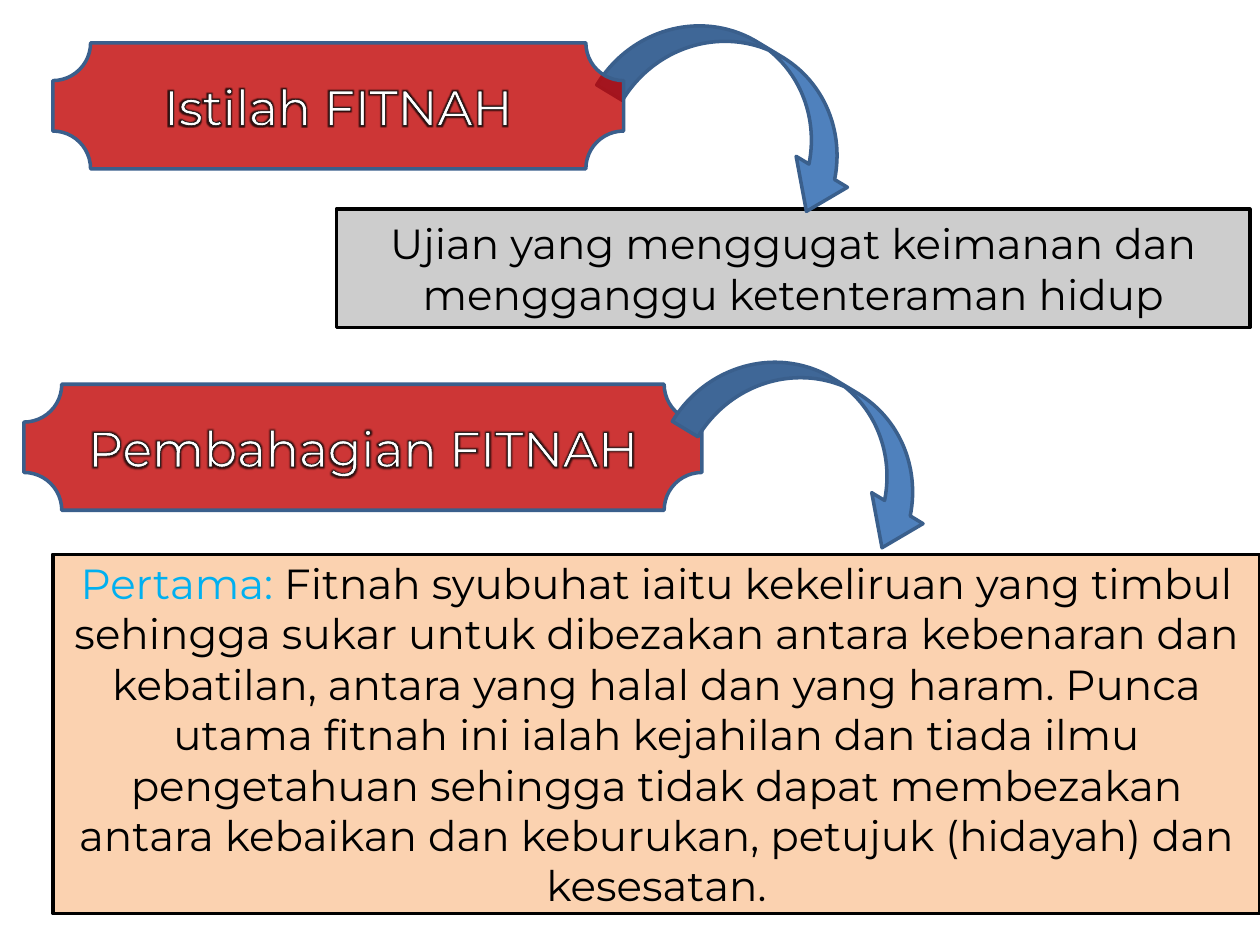
from dataclasses import dataclass

from lxml.etree import SubElement
from pptx import Presentation
from pptx.dml.color import RGBColor
from pptx.enum.shapes import MSO_SHAPE as Preset
from pptx.enum.text import MSO_ANCHOR as Anchor, PP_ALIGN as Align
from pptx.oxml import parse_xml
from pptx.oxml.ns import nsdecls, qn
from pptx.util import Pt


@dataclass(frozen=True)
class Theme:
    font: str = "Montserrat"
    banner_size: int = 28
    body_size: int = 24
    line_width: int = 2
    red: str = "C00000"
    grey: str = "BFBFBF"
    peach: str = "FAC090"
    blue: str = "4F81BD"
    edge: str = "3A5F8C"
    accent: str = "00B0F0"
    black: str = "000000"
    white: str = "FFFFFF"


THEME = Theme()


def add_panel(slide, preset, box, fill, line, opacity=100):
    """Add a filled, outlined shape in a box of left, top, width, height."""
    shape = slide.shapes.add_shape(preset, *map(Pt, box))
    shape.shadow.inherit = False
    shape.fill.solid()
    shape.fill.fore_color.rgb = RGBColor.from_string(fill)
    shape.line.color.rgb = RGBColor.from_string(line)
    shape.line.width = Pt(THEME.line_width)
    if opacity < 100:
        color = shape._element.spPr.find(qn("a:solidFill"))[0]
        SubElement(color, qn("a:alpha"), val=str(opacity * 1000))
    return shape


def write_text(shape, parts, size):
    """Write one centred paragraph from (text, colour) parts."""
    frame = shape.text_frame
    frame.word_wrap = True
    frame.vertical_anchor = Anchor.MIDDLE
    paragraph = frame.paragraphs[0]
    paragraph.alignment = Align.CENTER
    for text, color in parts:
        run = paragraph.add_run()
        run.text = text
        for name, value in {"size": Pt(size), "name": THEME.font}.items():
            setattr(run.font, name, value)
        run.font.color.rgb = RGBColor.from_string(color)
    return paragraph


def outline_text(run):
    """Give the letters a thin dark outline and a soft dark glow."""
    properties = run._r.get_or_add_rPr()
    ink = f'<a:solidFill><a:srgbClr val="{THEME.black}"/></a:solidFill>'
    properties.insert(0, parse_xml(
        f'<a:ln {nsdecls("a")} w="{Pt(0.75)}">{ink}</a:ln>'))
    properties.find(qn("a:solidFill")).addnext(parse_xml(
        f'<a:effectLst {nsdecls("a")}><a:glow rad="{Pt(3)}">'
        f'<a:srgbClr val="{THEME.black}"><a:alpha val="75000"/></a:srgbClr>'
        '</a:glow></a:effectLst>'))


def add_banner(slide, box, text):
    banner = add_panel(slide, Preset.PLAQUE, box, THEME.red, THEME.edge, 79)
    banner.adjustments[0] = 0.3
    paragraph = write_text(banner, [(text, THEME.white)], THEME.banner_size)
    outline_text(paragraph.runs[0])


def add_text_box(slide, box, parts, fill, opacity):
    panel = add_panel(slide, Preset.RECTANGLE, box, fill, THEME.black, opacity)
    write_text(panel, parts, THEME.body_size)


def add_swoop(slide, left, top):
    """Add the curved arrow leading from a banner to its text."""
    arrow = add_panel(slide, Preset.CURVED_LEFT_ARROW, (left, top, 68.4, 157),
                      THEME.blue, THEME.edge)
    arrow.rotation = 301.1
    for index, value in enumerate((0.25, 0.5, 0.35)):
        arrow.adjustments[index] = value


def add_term_section(slide, left, top):
    """Meaning of the term: the arrow runs behind the banner."""
    add_text_box(slide, (left + 162, top + 95, 522, 67.7), [
        ("Ujian yang menggugat keimanan dan mengganggu ketenteraman hidup",
         THEME.black)], THEME.grey, 77)
    add_swoop(slide, left + 361.5, top - 43.2)
    add_banner(slide, (left, top, 326.2, 72), "Istilah FITNAH")


def add_division_section(slide, left, top):
    """Divisions of the term: the arrow runs in front of the banner."""
    add_text_box(slide, (left + 16.5, top + 97.2, 689.8, 205.2), [
        ("Pertama: ", THEME.accent),
        ("Fitnah syubuhat iaitu kekeliruan yang timbul sehingga sukar untuk "
         "dibezakan antara kebenaran dan kebatilan, antara yang halal dan "
         "yang haram. Punca utama fitnah ini ialah kejahilan dan tiada ilmu "
         "pengetahuan sehingga tidak dapat membezakan antara kebaikan dan "
         "keburukan, petujuk (hidayah) dan kesesatan.", THEME.black),
    ], THEME.peach, 71)
    add_banner(slide, (left, top, 387.4, 72), "Pembahagian FITNAH")
    add_swoop(slide, left + 421.2, top - 46.1)


def main():
    presentation = Presentation()
    presentation.slide_width, presentation.slide_height = Pt(720), Pt(540)
    slide = presentation.slides.add_slide(presentation.slide_layouts[6])
    add_term_section(slide, 30.2, 24.5)
    add_division_section(slide, 13.7, 219.6)
    presentation.save("out.pptx")


if __name__ == "__main__":
    main()
